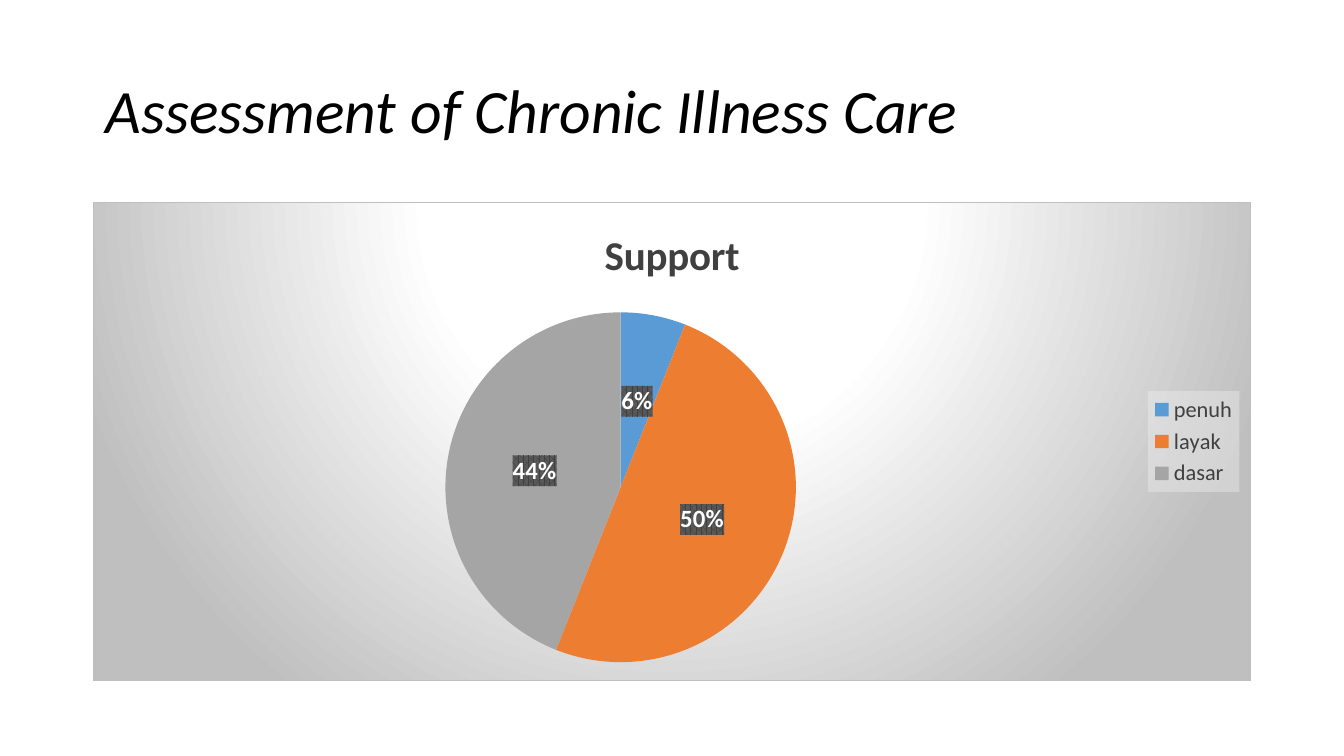
from pptx import Presentation
from pptx.chart.data import CategoryChartData
from pptx.dml.color import RGBColor
from pptx.enum.chart import XL_CHART_TYPE, XL_LABEL_POSITION, XL_LEGEND_POSITION
from pptx.enum.text import MSO_ANCHOR
from pptx.oxml import parse_xml
from pptx.oxml.ns import nsdecls, qn
from pptx.util import Inches, Pt

PIE = XL_CHART_TYPE.PIE
CENTER = XL_LABEL_POSITION.CENTER
RIGHT = XL_LEGEND_POSITION.RIGHT
MIDDLE = MSO_ANCHOR.MIDDLE

TITLE = "Assessment of Chronic Illness Care"
NAME = "Support"
SLICES = [("penuh", 6, "blue"), ("layak", 50, "orange"), ("dasar", 44, "gray")]
COLORS = {
    "black": "000000", "white": "FFFFFF", "dark": "404040", "mid": "595959",
    "edge": "BFBFBF", "pale": "F2F2F2",
    "blue": "5B9BD5", "orange": "ED7D31", "gray": "A5A5A5",
}
FACE = "Calibri"
LEFT, WIDTH = 0.69, 8.62


def style(font, size, color, bold=False):
    font.name = FACE
    font.size = Pt(size)
    font.bold = bold
    font.color.rgb = RGBColor.from_string(COLORS[color])


def tint(color, alpha=100):
    return (f'<a:srgbClr val="{COLORS[color]}">'
            f'<a:alpha val="{alpha * 1000}"/></a:srgbClr>')


def solid(color, alpha=100):
    return f"<a:solidFill>{tint(color, alpha)}</a:solidFill>"


def weave(front, back):
    return (f'<a:pattFill prst="pct75"><a:fgClr>{tint(front)}</a:fgClr>'
            f'<a:bgClr>{tint(back)}</a:bgClr></a:pattFill>')


def radial(stops):
    marks = "".join(
        f'<a:gs pos="{pos * 1000}">{tint(color)}</a:gs>' for pos, color in stops)
    return (f'<a:gradFill><a:gsLst>{marks}</a:gsLst><a:path path="circle">'
            '<a:fillToRect l="50000" t="-80000" r="50000" b="180000"/>'
            '</a:path></a:gradFill>')


def paint(node, fill, line="<a:ln><a:noFill/></a:ln>"):
    props = parse_xml(f'<c:spPr {nsdecls("c", "a")}>{fill}{line}</c:spPr>')
    node.find(qn("c:txPr")).addprevious(props)


deck = Presentation()
deck.slide_width = Inches(10)
deck.slide_height = deck.slide_width * 9 // 16
slide = deck.slides.add_slide(deck.slide_layouts[6])

box = slide.shapes.add_textbox(Inches(LEFT), Inches(0.3), Inches(WIDTH), Inches(1.09))
frame = box.text_frame
frame.word_wrap = True
frame.vertical_anchor = MIDDLE
para = frame.paragraphs[0]
para.text = TITLE
para.line_spacing = 0.9
style(para.font, 33, "black")
para.font.italic = True

data = CategoryChartData()
data.categories = [name for name, _, _ in SLICES]
data.add_series(NAME, [value for _, value, _ in SLICES])
chart = slide.shapes.add_chart(
    PIE, Inches(LEFT), Inches(1.5), Inches(WIDTH), Inches(3.57), data).chart
style(chart.font, 10, "black")
edge = f'<a:ln w="{Pt(0.75)}" cap="flat">{solid("edge")}<a:round/></a:ln>'
paint(chart.element, radial([(0, "white"), (39, "white"), (100, "edge")]), edge)

chart.has_title = True
head = chart.chart_title.text_frame.paragraphs[0]
head.text = NAME
style(head.font, 22, "dark", True)
chart.chart_title.include_in_layout = False

chart.has_legend = True
legend = chart.legend
legend.position = RIGHT
legend.include_in_layout = False
style(legend.font, 12, "dark")
paint(legend._element, solid("pale", 39))

plot = chart.plots[0]
plot.vary_by_categories = True
series = plot.series[0]
for i, (_, _, color) in enumerate(SLICES):
    fill = series.points[i].format.fill
    fill.solid()
    fill.fore_color.rgb = RGBColor.from_string(COLORS[color])

labels = series.data_labels
labels.show_percentage = True
labels.show_value = False
labels.number_format = "0%"
labels.number_format_is_linked = False
labels.position = CENTER
style(labels.font, 13.3, "white", True)
paint(labels._element, weave("dark", "mid"))

deck.save("out.pptx")
